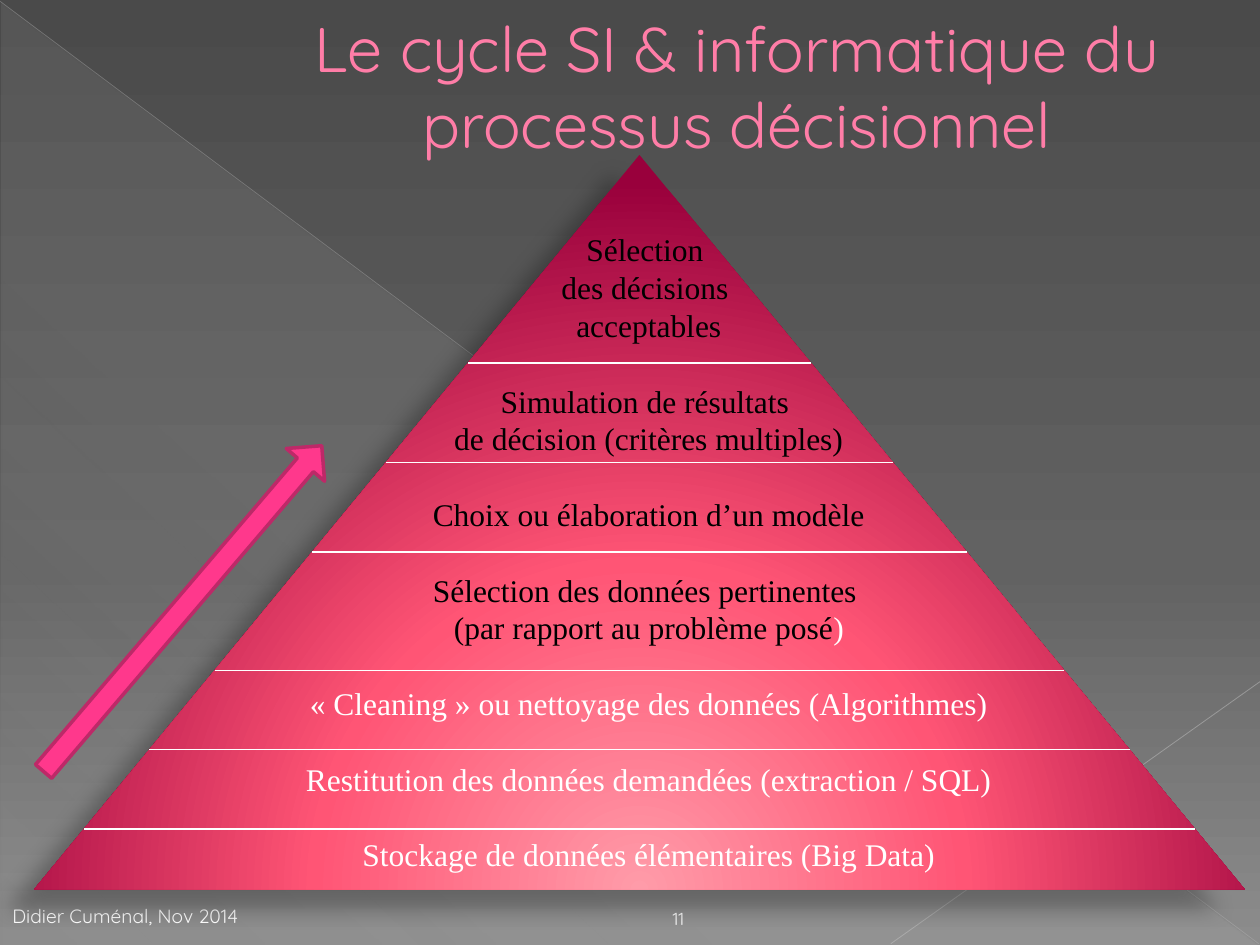
from lxml.etree import SubElement
from pptx import Presentation
from pptx.dml.color import RGBColor
from pptx.enum.shapes import MSO_CONNECTOR, MSO_SHAPE
from pptx.enum.text import MSO_ANCHOR, MSO_AUTO_SIZE, PP_ALIGN
from pptx.oxml.ns import qn
from pptx.util import Inches, Pt

COLORS = {
    "white": "FFFFFF", "black": "000000", "title": "FF7DA7",
    "arrow": "FF388C", "arrow_edge": "BD2968",
    "diagonal": "BFBFBF", "corner": "C6C6C6", "sheen": "D2D2D2",
    "bg_top": "4A4A4A", "bg_mid": "626262", "bg_end": "8C8C8C",
    "glow": "FF9BA9", "rose": "FF5575", "wine": "99003C",
}
SANS, SERIF = "Quicksand", "Times New Roman"
LINE_PITCH = Pt(21.6)

PYRAMID = (0.27, 1.23, 9.61, 5.83)
SEPARATORS = [2.88, 3.67, 4.38, 5.32, 5.95, 6.58]
# One entry per level, from the top; each line is a list of (text, colour) runs.
LEVELS = [
    [[("Sélection ", "black")], [("des décisions ", "black")], [("acceptables", "black")]],
    [[("Simulation de résultats ", "black")], [("de décision (critères multiples)", "black")]],
    [[("Choix ou élaboration d’un modèle", "black")]],
    [[("Sélection des données pertinentes ", "black")],
     [("(par rapport au problème posé", "black"), (")", "white")]],
    [[("« Cleaning » ou nettoyage des données (Algorithmes)", "white")]],
    [[("Restitution des données demandées (extraction / SQL)", "white")]],
    [[("Stockage de données élémentaires (Big Data)", "white")]],
]


def rgb(name):
    return RGBColor.from_string(COLORS[name])


def add_color(parent, name, alpha=100):
    clr = SubElement(parent, qn("a:srgbClr"), val=COLORS[name])
    if alpha < 100:
        SubElement(clr, qn("a:alpha"), val=str(alpha * 1000))


def set_gradient(fill, owner, stops, angle=None, focus=None):
    """Fill with (position, colour, alpha) stops, linear by angle or circular around focus."""
    fill.solid()
    solid = next(owner.iter(qn("a:solidFill")))
    grad = SubElement(solid.getparent(), qn("a:gradFill"), rotWithShape="1")
    solid.getparent().replace(solid, grad)
    gs_list = SubElement(grad, qn("a:gsLst"))
    for pos, name, alpha in stops:
        add_color(SubElement(gs_list, qn("a:gs"), pos=str(pos * 1000)), name, alpha)
    if focus:
        circle = SubElement(grad, qn("a:path"), path="circle")
        SubElement(circle, qn("a:fillToRect"),
                   **{side: str(v * 1000) for side, v in zip("ltrb", focus)})
    else:
        SubElement(grad, qn("a:lin"), ang=str(angle * 60000), scaled="0")


def add_shape(s, kind, box):
    sp = s.shapes.add_shape(kind, *map(Inches, box))
    sp.shadow.inherit = False
    sp.line.fill.background()
    return sp


def add_line(s, start, end, color, width, alpha=100):
    line = s.shapes.add_connector(MSO_CONNECTOR.STRAIGHT, *map(Inches, start + end))
    line.line.width = Pt(width)
    line.line.color.rgb = rgb(color)
    sp_pr = line._element.spPr
    if alpha < 100:
        SubElement(next(sp_pr.iter(qn("a:srgbClr"))), qn("a:alpha"), val=str(alpha * 1000))
    SubElement(sp_pr, qn("a:effectLst"))


def add_run(p, text, font, size, color):
    r = p.add_run()
    r.text = text
    for key, value in {"name": font, "size": Pt(size)}.items():
        setattr(r.font, key, value)
    r.font.color.rgb = rgb(color)


def add_text_box(s, box, **frame_format):
    tf = s.shapes.add_textbox(*map(Inches, box)).text_frame
    for key, value in {"word_wrap": True, **frame_format}.items():
        setattr(tf, key, value)
    return tf


def add_backdrop(s):
    set_gradient(s.background.fill, s.element,
                 [(0, "bg_top", 100), (60, "bg_mid", 100), (100, "bg_end", 100)], angle=90)
    sheen = add_shape(s, MSO_SHAPE.RIGHT_TRIANGLE, (0.01, 0.02, 9.98, 7.48))
    set_gradient(sheen.fill, sheen._element.spPr,
                 [(0, "sheen", 10), (70, "sheen", 8), (100, "sheen", 1)], angle=133)
    add_line(s, (0, 0.01), (9.99, 7.49), "diagonal", 0.39, 35)
    add_line(s, (10, 5.41), (7.07, 7.49), "corner", 0.47, 45)


def add_footer(s):
    tf = add_text_box(s, (0, 7.13, 2.14, 0.29), word_wrap=False,
                      auto_size=MSO_AUTO_SIZE.SHAPE_TO_FIT_TEXT)
    add_run(tf.paragraphs[0], "Didier Cuménal, Nov 2014", SANS, 11, "white")
    tf = add_text_box(s, (5.24, 7.09, 2.33, 0.33), vertical_anchor=MSO_ANCHOR.BOTTOM)
    add_run(tf.paragraphs[0], "11", SANS, 10, "white")


def add_pyramid(s):
    sp = add_shape(s, MSO_SHAPE.ISOSCELES_TRIANGLE, PYRAMID)
    sp_pr = sp._element.spPr
    set_gradient(sp.fill, sp_pr, [(0, "glow", 100), (46, "rose", 100), (100, "wine", 100)],
                 focus=(50, 155, 50, -55))
    shadow = SubElement(sp_pr.find(qn("a:effectLst")), qn("a:outerShdw"),
                        blurRad=str(Pt(11.8)), dist=str(Pt(19.7)),
                        dir=str(141 * 60000), rotWithShape="0")
    add_color(shadow, "black", 28)


def add_levels(s):
    tf = add_text_box(s, (2.3, 1.78, 5.7, 5.25), word_wrap=False,
                      auto_size=MSO_AUTO_SIZE.SHAPE_TO_FIT_TEXT)
    p = None
    for level in LEVELS:
        for i, line in enumerate(level):
            first = p is None
            p = tf.paragraphs[0] if first else tf.add_paragraph()
            gap = LINE_PITCH if i == 0 and not first else Pt(0)
            for key, value in {"alignment": PP_ALIGN.CENTER, "line_spacing": LINE_PITCH,
                               "space_before": gap}.items():
                setattr(p, key, value)
            for text, color in line:
                add_run(p, text, SERIF, 18, color)


def add_separators(s):
    """Draw each separator from edge to edge of the pyramid."""
    left, top, width, height = PYRAMID
    center = left + width / 2
    for y in SEPARATORS:
        half = (y - top) / height * width / 2
        add_line(s, (center - half, y), (center + half, y), "white", 0.75)


def add_arrow(s):
    sp = add_shape(s, MSO_SHAPE.RIGHT_ARROW, (-0.25, 4.63, 3.4, 0.4))
    sp.rotation = 310.5
    sp.adjustments[0] = 0.42
    sp.fill.solid()
    sp.fill.fore_color.rgb = rgb("arrow")
    sp.line.color.rgb = rgb("arrow_edge")
    sp.line.width = Pt(2)


def add_title(s):
    p = add_text_box(s, (1.07, 0.03, 9.03, 1.08)).paragraphs[0]
    p.alignment = PP_ALIGN.CENTER
    p._p.get_or_add_pPr().set("marL", str(Inches(0.53)))
    add_run(p, "Le cycle SI & informatique du processus décisionnel", SANS, 36, "title")


def main():
    prs = Presentation()
    prs.slide_width, prs.slide_height = Inches(10), Inches(7.5)
    s = prs.slides.add_slide(prs.slide_layouts[6])
    for add_part in (add_backdrop, add_footer, add_pyramid, add_levels,
                     add_separators, add_arrow, add_title):
        add_part(s)
    prs.save("out.pptx")


if __name__ == "__main__":
    main()
